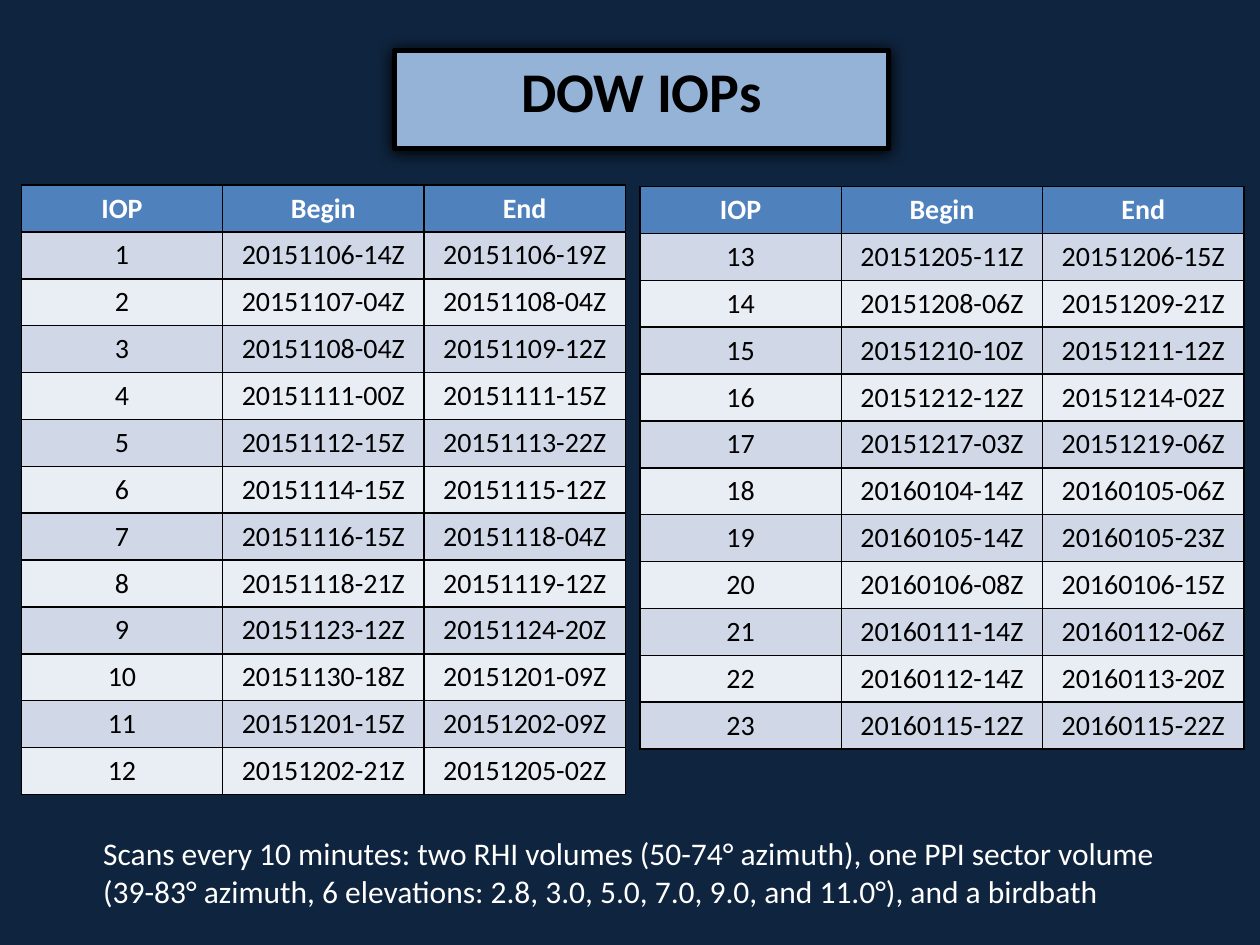
import pptx
import pptx.dml.color
import pptx.enum.shapes
import pptx.enum.text
import pptx.oxml
import pptx.oxml.ns
import pptx.util

Cm = pptx.util.Cm
Pt = pptx.util.Pt
CENTER = pptx.enum.text.PP_ALIGN.CENTER
LEFT = pptx.enum.text.PP_ALIGN.LEFT

# Content
TITLE = "DOW IOPs"
NOTE = ("Scans every 10 minutes: two RHI volumes (50-74° azimuth), one PPI sector volume "
        "(39-83° azimuth, 6 elevations: 2.8, 3.0, 5.0, 7.0, 9.0, and 11.0°), and a birdbath")
HEADER = ("IOP", "Begin", "End")
PERIODS = [
    ("20151106-14Z", "20151106-19Z"),
    ("20151107-04Z", "20151108-04Z"),
    ("20151108-04Z", "20151109-12Z"),
    ("20151111-00Z", "20151111-15Z"),
    ("20151112-15Z", "20151113-22Z"),
    ("20151114-15Z", "20151115-12Z"),
    ("20151116-15Z", "20151118-04Z"),
    ("20151118-21Z", "20151119-12Z"),
    ("20151123-12Z", "20151124-20Z"),
    ("20151130-18Z", "20151201-09Z"),
    ("20151201-15Z", "20151202-09Z"),
    ("20151202-21Z", "20151205-02Z"),
    ("20151205-11Z", "20151206-15Z"),
    ("20151208-06Z", "20151209-21Z"),
    ("20151210-10Z", "20151211-12Z"),
    ("20151212-12Z", "20151214-02Z"),
    ("20151217-03Z", "20151219-06Z"),
    ("20160104-14Z", "20160105-06Z"),
    ("20160105-14Z", "20160105-23Z"),
    ("20160106-08Z", "20160106-15Z"),
    ("20160111-14Z", "20160112-06Z"),
    ("20160112-14Z", "20160113-20Z"),
    ("20160115-12Z", "20160115-22Z"),
]
ROWS = [(str(number), *period) for number, period in enumerate(PERIODS, 1)]

# Left, top in cm and the rows of each table
TABLES = [(0.43, 3.73, ROWS[:12]), (12.9, 3.76, ROWS[12:])]
COLUMN_WIDTH, ROW_HEIGHT = 4.06, 0.93

# Text formats
TITLE_FONT = {"name": "Calibri", "size": Pt(32), "bold": True}
HEADER_FONT = {"name": "Calibri", "size": Pt(16), "bold": True}
BODY_FONT = {"name": "Calibri", "size": Pt(16), "bold": False}
NOTE_FONT = {"name": "Calibri", "size": Pt(18)}

NAVY, SKY, BLUE = "0F243E", "95B3D7", "4F81BD"
BANDS = ("D0D8E8", "E9EDF4")
BLACK, WHITE = "000000", "FFFFFF"


def paint(fill, color):
    fill.solid()
    fill.fore_color.rgb = pptx.dml.color.RGBColor.from_string(color)


def write(frame, text, font, color, align):
    para = frame.paragraphs[0]
    para.alignment = align
    span = para.add_run()
    span.text = text
    for name, value in font.items():
        setattr(span.font, name, value)
    paint(span.font.fill, color)


def add_borders(cell):
    properties = cell._tc.get_or_add_tcPr()
    for index, side in enumerate(("lnL", "lnR", "lnT", "lnB")):
        properties.insert(index, pptx.oxml.parse_xml(
            f'<a:{side} {pptx.oxml.ns.nsdecls("a")} w="{Pt(1)}"><a:solidFill>'
            f'<a:srgbClr val="{BLACK}"/></a:solidFill></a:{side}>'))


def add_period_table(page, left, top, rows):
    lines = [HEADER, *rows]
    table = page.shapes.add_table(
        len(lines), len(HEADER), Cm(left), Cm(top),
        Cm(COLUMN_WIDTH * len(HEADER)), Cm(ROW_HEIGHT * len(lines))).table
    for column in table.columns:
        column.width = Cm(COLUMN_WIDTH)
    for index, line in enumerate(lines):
        table.rows[index].height = Cm(ROW_HEIGHT)
        if index == 0:
            fill, font, color = BLUE, HEADER_FONT, WHITE
        else:
            fill, font, color = BANDS[(index - 1) % 2], BODY_FONT, BLACK
        for cell, text in zip(table.rows[index].cells, line):
            paint(cell.fill, fill)
            add_borders(cell)
            write(cell.text_frame, text, font, color, CENTER)


def add_title(page):
    box = page.shapes.add_shape(pptx.enum.shapes.MSO_SHAPE.RECTANGLE,
                                Cm(7.95), Cm(1.02), Cm(9.96), Cm(1.98))
    box.shadow.inherit = False
    paint(box.fill, SKY)
    paint(box.line.fill, BLACK)
    box.line.width = Pt(3)
    # Soft shadow straight below
    effects = box._element.spPr.find(pptx.oxml.ns.qn("a:effectLst"))
    effects.append(pptx.oxml.parse_xml(
        f'<a:outerShdw {pptx.oxml.ns.nsdecls("a")} blurRad="{Pt(8.5)}" dist="{Pt(1)}" '
        f'dir="5400000" rotWithShape="0"><a:srgbClr val="{BLACK}"/></a:outerShdw>'))
    box.text_frame.word_wrap = True
    box.text_frame.vertical_anchor = pptx.enum.text.MSO_ANCHOR.TOP
    write(box.text_frame, TITLE, TITLE_FONT, BLACK, CENTER)


def add_note(page):
    box = page.shapes.add_textbox(Cm(1.83), Cm(16.69), Cm(22.28), Cm(1.8))
    box.text_frame.word_wrap = True
    box.text_frame.auto_size = pptx.enum.text.MSO_AUTO_SIZE.SHAPE_TO_FIT_TEXT
    write(box.text_frame, NOTE, NOTE_FONT, WHITE, LEFT)


def main():
    deck = pptx.Presentation()
    deck.slide_width, deck.slide_height = Cm(25.4), Cm(19.05)
    page = deck.slides.add_slide(deck.slide_layouts[6])
    paint(page.background.fill, NAVY)
    for left, top, rows in TABLES:
        add_period_table(page, left, top, rows)
    add_title(page)
    add_note(page)
    deck.save("out.pptx")


if __name__ == "__main__":
    main()
